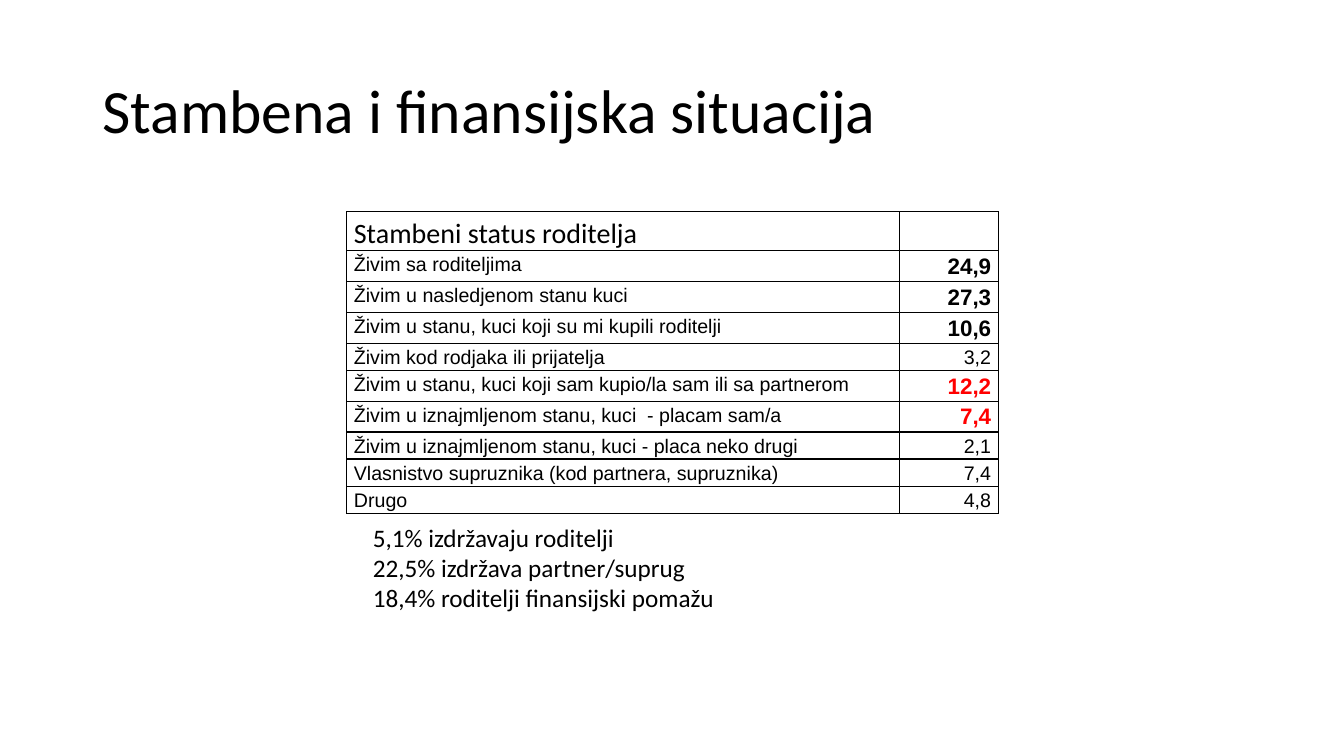
"""Build the slide on the housing and financial situation of parents."""
from dataclasses import dataclass

from lxml.etree import SubElement
from pptx import Presentation
from pptx.dml.color import RGBColor
from pptx.enum.text import MSO_ANCHOR, PP_ALIGN
from pptx.oxml.ns import qn
from pptx.util import Inches, Pt

BLACK = RGBColor(0x00, 0x00, 0x00)
RED = RGBColor(0xFF, 0x00, 0x00)

HEADER = {"name": "Calibri", "size": Pt(20), "bold": False}
PLAIN = {"name": "Arial", "size": Pt(14), "bold": False}
STRONG = {"name": "Arial", "size": Pt(16), "bold": True}
TITLE = {"name": "Calibri", "size": Pt(44)}
NOTE = {"name": "Calibri", "size": Pt(18)}
CELL = {"margin_left": Inches(0.07), "margin_right": Inches(0.07),
        "margin_top": 0, "margin_bottom": 0}


@dataclass
class Status:
    label: str
    value: str
    value_font: dict
    color: RGBColor = BLACK
    label_font: dict = None


@dataclass
class TextBlock:
    lines: list
    box: tuple
    font: dict
    anchor: MSO_ANCHOR = MSO_ANCHOR.TOP
    spacing: float = 1.0


STATUSES = [
    Status("Stambeni status roditelja", "", HEADER, label_font=HEADER),
    Status("Živim sa roditeljima", "24,9", STRONG),
    Status("Živim u nasledjenom stanu kuci", "27,3", STRONG),
    Status("Živim u stanu, kuci koji su mi kupili roditelji", "10,6", STRONG),
    Status("Živim kod rodjaka ili prijatelja", "3,2", PLAIN),
    Status("Živim u stanu, kuci koji sam kupio/la sam ili sa partnerom",
           "12,2", STRONG, RED),
    Status("Živim u iznajmljenom stanu, kuci  - placam sam/a",
           "7,4", STRONG, RED),
    Status("Živim u iznajmljenom stanu, kuci - placa neko drugi", "2,1", PLAIN),
    Status("Vlasnistvo supruznika (kod partnera, supruznika)", "7,4", PLAIN),
    Status("Drugo", "4,8", PLAIN),
]
BLOCKS = [
    TextBlock(["Stambena i finansijska situacija"], (0.92, 0.4, 11.5, 1.45),
              TITLE, MSO_ANCHOR.MIDDLE, 0.9),
    TextBlock(["5,1% izdržavaju roditelji", "22,5% izdržava partner/suprug",
               "18,4% roditelji finansijski pomažu"],
              (3.6, 5.13, 6.14, 1.01), NOTE),
]


def set_all(target, values: dict) -> None:
    """Set each attribute of the target from the dict."""
    for name, value in values.items():
        setattr(target, name, value)


def write(p, text: str, font: dict, color: RGBColor, spacing: float) -> None:
    """Put formatted text in a paragraph."""
    p.line_spacing = spacing
    set_all(p.font, font)
    if text:
        r = p.add_run()
        r.text = text
        set_all(r.font, font)
        r.font.color.rgb = color


def add_borders(cell) -> None:
    """Give a cell a thin black line on every side and no fill."""
    pr = cell._tc.get_or_add_tcPr()
    for side in ("a:lnL", "a:lnR", "a:lnT", "a:lnB"):
        ln = SubElement(pr, qn(side), w=str(Pt(1)))
        fill = SubElement(ln, qn("a:solidFill"))
        SubElement(fill, qn("a:srgbClr"), val=str(BLACK))
    cell.fill.background()


def add_block(s, block: TextBlock) -> None:
    """Draw a text box with one paragraph a line."""
    tf = s.shapes.add_textbox(*map(Inches, block.box)).text_frame
    set_all(tf, {"word_wrap": True, "vertical_anchor": block.anchor})
    for i, line in enumerate(block.lines):
        p = tf.add_paragraph() if i else tf.paragraphs[0]
        write(p, line, block.font, BLACK, block.spacing)


def add_status_table(s) -> None:
    """Draw the table of housing statuses."""
    frame = s.shapes.add_table(len(STATUSES), 2, Inches(3.44), Inches(2.1),
                               Inches(6.46), Inches(2.8))
    table = frame.table
    set_all(table, {"first_row": False, "horz_banding": False})
    for column, width in zip(table.columns, (5.48, 0.98)):
        column.width = Inches(width)
    for row, status in zip(table.rows, STATUSES):
        row.height = Inches(0.24)
        label, value = row.cells
        for cell in row.cells:
            set_all(cell, CELL)
            add_borders(cell)
        write(label.text_frame.paragraphs[0], status.label,
              status.label_font or PLAIN, BLACK, 1.15)
        p = value.text_frame.paragraphs[0]
        p.alignment = PP_ALIGN.RIGHT
        write(p, status.value, status.value_font, status.color, 1.15)


def main() -> None:
    """Build and save the slide."""
    prs = Presentation()
    set_all(prs, {"slide_width": Inches(13.33), "slide_height": Inches(7.5)})
    s = prs.slides.add_slide(prs.slide_layouts[6])
    title, notes = BLOCKS
    add_block(s, title)
    add_status_table(s)
    add_block(s, notes)
    prs.save("out.pptx")


if __name__ == "__main__":
    main()
